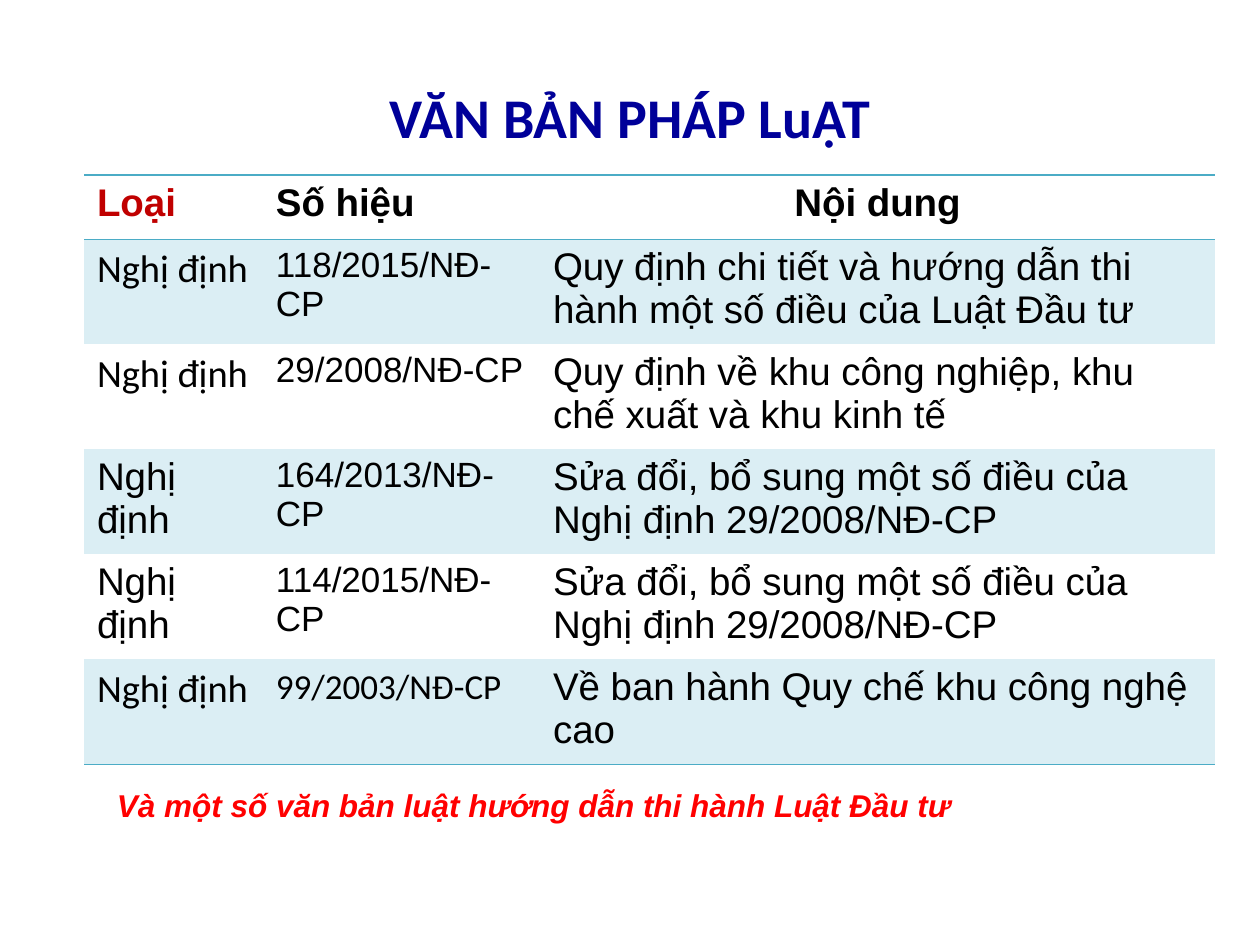
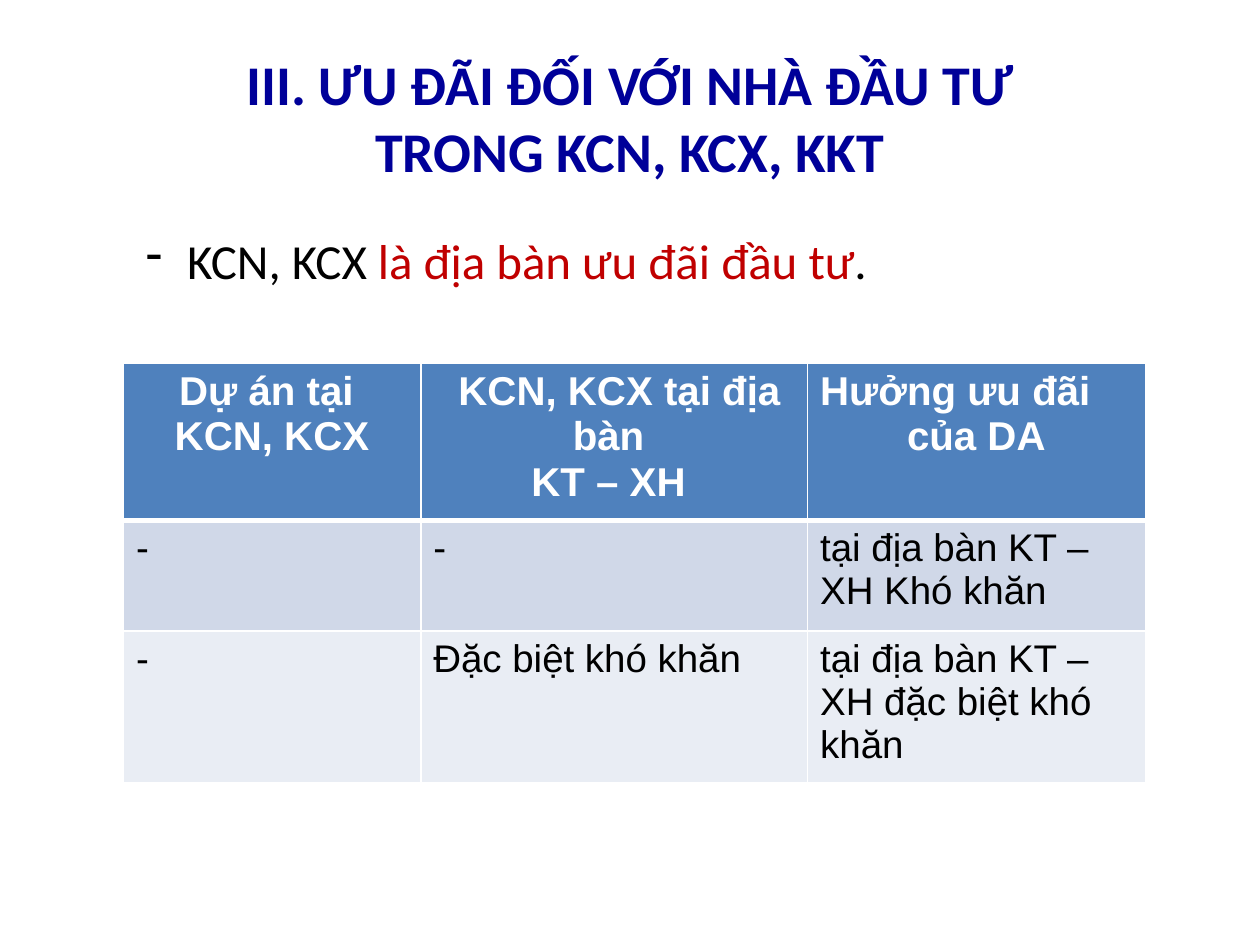
import pptx
import pptx.util
import pptx.dml.color
import pptx.enum.text
import pptx.oxml.ns
from lxml import etree

Inches = pptx.util.Inches
Align = pptx.enum.text.PP_ALIGN
Anchor = pptx.enum.text.MSO_ANCHOR

# Shared style
COLORS = {
    "title": "000099", "text": "000000", "white": "FFFFFF",
    "accent": "C00000", "note": "FF0000",
    "teal": "4BACC6", "teal_band": "DBEEF4",
    "blue": "4F81BD", "band_dark": "D0D8E8", "band_light": "E9EDF4",
}
PLAIN_TABLE_STYLE = "{2D5ABB26-0587-4C30-8999-92F81FD0307C}"

# Content of slide 1
LAWS_TITLE = "VĂN BẢN PHÁP LuẬT"
LAWS_HEADER = ("Loại", "Số hiệu", "Nội dung")
LAWS = [
    ("Nghị định", "118/2015/NĐ-CP", "Quy định chi tiết và hướng dẫn thi hành một số điều của Luật Đầu tư"),
    ("Nghị định", "29/2008/NĐ-CP", "Quy định về khu công nghiệp, khu chế xuất và khu kinh tế"),
    ("Nghị định", "164/2013/NĐ-CP", "Sửa đổi, bổ sung một số điều của Nghị định 29/2008/NĐ-CP"),
    ("Nghị định", "114/2015/NĐ-CP", "Sửa đổi, bổ sung một số điều của Nghị định 29/2008/NĐ-CP"),
    ("Nghị định", "99/2003/NĐ-CP", "Về ban hành Quy chế khu công nghệ cao"),
]
LAWS_CALIBRI_CELLS = {(1, 0), (2, 0), (5, 0), (5, 1)}
LAWS_NOTE = "Và một số văn bản luật hướng dẫn thi hành Luật Đầu tư"

# Content of slide 2
INCENTIVES_TITLE = "III. ƯU ĐÃI ĐỐI VỚI NHÀ ĐẦU TƯ\vTRONG KCN, KCX, KKT"
INCENTIVES_POINT = [(" KCN, KCX ", "text"), ("là địa bàn ưu đãi đầu tư", "accent"), (".", "text")]
INCENTIVES_HEADER = ("Dự án tại \nKCN, KCX", " KCN, KCX tại địa bàn \nKT – XH ", "Hưởng ưu đãi\ncủa DA")
INCENTIVES = [
    ("-", "-", "tại địa bàn KT – XH Khó khăn"),
    ("-", "Đặc biệt khó khăn", "tại địa bàn KT – XH đặc biệt khó khăn"),
]


def rgb(name):
    return pptx.dml.color.RGBColor.from_string(COLORS[name])


def format_run(run, size, color="text", font="Arial", bold=False, italic=False):
    run.font.size = pptx.util.Pt(size)
    run.font.name = font
    run.font.color.rgb = rgb(color)
    run.font.bold = bold
    run.font.italic = italic


def write(text_frame, text, size, align=Align.LEFT, **style):
    text_frame.text = text
    for paragraph in text_frame.paragraphs:
        paragraph.alignment = align
        for run in paragraph.runs:
            format_run(run, size, **style)


def add_text_box(slide, left, top, width, height, wrap=True):
    text_frame = slide.shapes.add_textbox(*map(Inches, (left, top, width, height))).text_frame
    text_frame.word_wrap = wrap
    return text_frame


def add_titled_slide(presentation, title):
    slide = presentation.slides.add_slide(presentation.slide_layouts[6])
    text_frame = add_text_box(slide, 0.5, 0.3, 9, 1.25)
    text_frame.vertical_anchor = Anchor.MIDDLE
    write(text_frame, title, 32, Align.CENTER, color="title", font="Calibri", bold=True)
    return slide


def add_plain_table(slide, left, top, column_widths, row_heights):
    frame = slide.shapes.add_table(
        len(row_heights), len(column_widths), Inches(left), Inches(top),
        Inches(sum(column_widths)), Inches(sum(row_heights)))
    table = frame.table
    table._tbl.tblPr.find(pptx.oxml.ns.qn("a:tableStyleId")).text = PLAIN_TABLE_STYLE
    for column, width in zip(table.columns, column_widths):
        column.width = Inches(width)
    for row, height in zip(table.rows, row_heights):
        row.height = Inches(height)
    return table


def style_cell(cell, fill, borders):
    """Borders map a side (L, R, T, B) to a colour name and a width in points."""
    properties = cell._tc.get_or_add_tcPr()
    for side in "LRTB":
        if side in borders:
            color, width = borders[side]
            line = etree.SubElement(properties, pptx.oxml.ns.qn(f"a:ln{side}"), w=str(pptx.util.Pt(width)))
            solid = etree.SubElement(line, pptx.oxml.ns.qn("a:solidFill"))
            etree.SubElement(solid, pptx.oxml.ns.qn("a:srgbClr"), val=COLORS[color])
    if fill:
        cell.fill.solid()
        cell.fill.fore_color.rgb = rgb(fill)
    else:
        cell.fill.background()


def build_laws_slide(presentation):
    slide = add_titled_slide(presentation, LAWS_TITLE)
    rows = [LAWS_HEADER] + LAWS
    table = add_plain_table(slide, 0.67, 1.39, (1.42, 2.2, 5.35), [0.51] + [0.78] * len(LAWS))
    rule = ("teal", 1)
    for r, row in enumerate(rows):
        borders = {"T": rule, "B": rule} if r == 0 else {"B": rule} if r == len(LAWS) else {}
        for c, text in enumerate(row):
            cell = table.cell(r, c)
            style_cell(cell, "teal_band" if r % 2 else None, borders)
            if r == 0:
                write(cell.text_frame, text, 22, Align.CENTER if c == 2 else Align.LEFT,
                      color="text" if c else "accent", bold=True)
            else:
                write(cell.text_frame, text, 20 if c == 1 else 22,
                      font="Calibri" if (r, c) in LAWS_CALIBRI_CELLS else "Arial")

    # Closing note
    note = add_text_box(slide, 0.83, 6.19, 7.1, 0.4, wrap=False)
    write(note, LAWS_NOTE, 18, color="note", bold=True, italic=True)


def build_incentives_slide(presentation):
    slide = add_titled_slide(presentation, INCENTIVES_TITLE)
    table = add_plain_table(slide, 0.98, 2.88, (2.36, 3.07, 2.68), (1.17, 0.88, 1.13))
    fills = ("blue", "band_dark", "band_light")
    for r, row in enumerate([INCENTIVES_HEADER] + INCENTIVES):
        borders = dict.fromkeys("LRTB", ("white", 1))
        if r < 2:
            borders["B" if r == 0 else "T"] = ("white", 3)
        for c, text in enumerate(row):
            cell = table.cell(r, c)
            style_cell(cell, fills[r], borders)
            if r == 0:
                write(cell.text_frame, text, 23, Align.CENTER, color="white", bold=True)
            else:
                write(cell.text_frame, text, 22)
    table.cell(0, 2).text_frame.paragraphs[0].alignment = Align.LEFT

    # Dashed point above the table
    paragraph = add_text_box(slide, 1.06, 1.78, 8.11, 0.57).paragraphs[0]
    paragraph.alignment = Align.JUSTIFY
    for text, color in INCENTIVES_POINT:
        run = paragraph.add_run()
        run.text = text
        format_run(run, 28, color=color, font="Calibri")
    properties = paragraph._p.get_or_add_pPr()
    properties.set("marL", str(Inches(0.24)))
    properties.set("indent", str(-Inches(0.24)))
    etree.SubElement(properties, pptx.oxml.ns.qn("a:buChar"), char="-")


def main():
    presentation = pptx.Presentation()
    presentation.slide_width = Inches(10)
    presentation.slide_height = Inches(7.5)
    build_laws_slide(presentation)
    build_incentives_slide(presentation)
    presentation.save("out.pptx")


if __name__ == "__main__":
    main()
